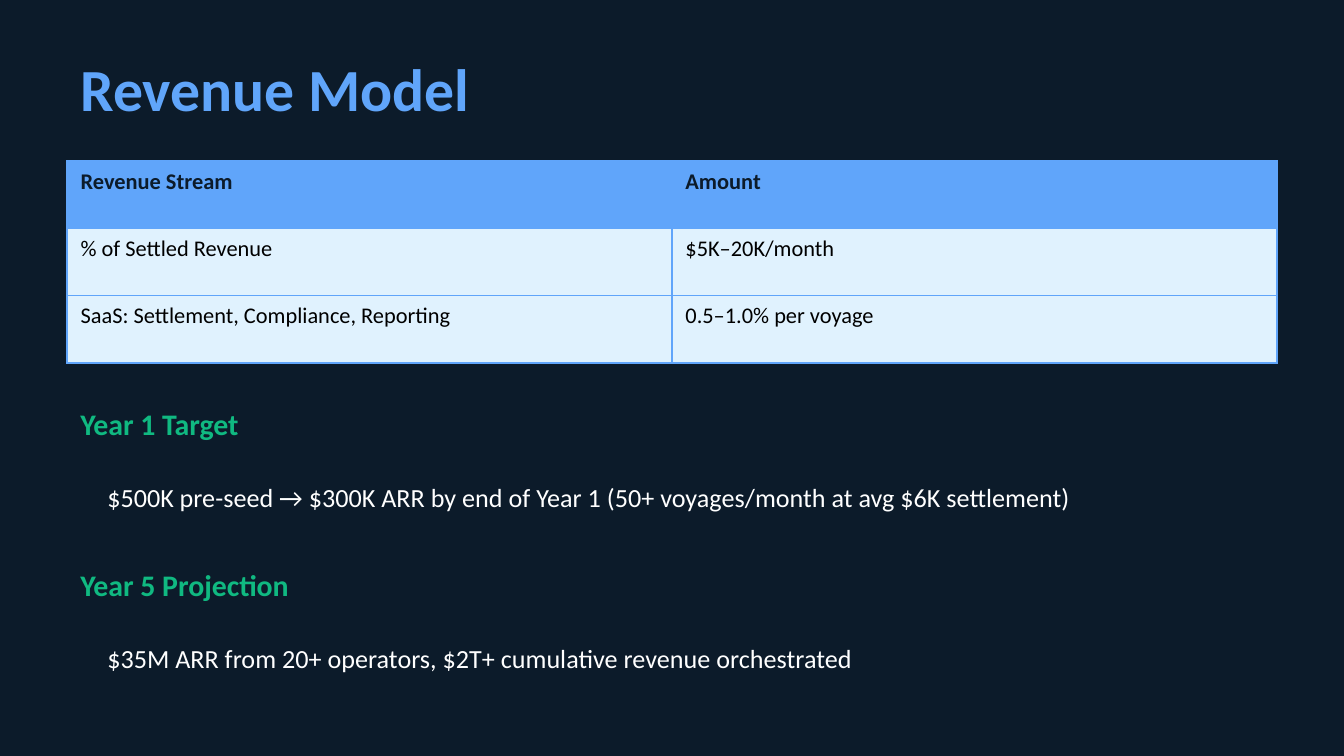
from dataclasses import dataclass

from lxml import etree
from pptx import Presentation
from pptx.dml.color import RGBColor
from pptx.enum.text import MSO_ANCHOR
from pptx.oxml.ns import qn
from pptx.util import Inches, Pt

MIDDLE = MSO_ANCHOR.MIDDLE
BLANK_LAYOUT = 6
SLIDE_WIDTH = 10
SLIDE_HEIGHT = SLIDE_WIDTH * 9 / 16


@dataclass(frozen=True)
class Theme:
    font: str = "Calibri"
    navy: str = "0C1B2A"
    blue: str = "60A5FA"
    pale_blue: str = "E0F2FE"
    green: str = "10B981"
    white: str = "FFFFFF"
    black: str = "000000"
    title_size: int = 32
    heading_size: int = 16
    body_size: int = 14
    table_size: int = 12
    border_width: int = 1


THEME = Theme()

REVENUE_STREAMS = [
    ("Revenue Stream", "Amount"),
    ("% of Settled Revenue", "$5K–20K/month"),
    ("SaaS: Settlement, Compliance, Reporting", "0.5–1.0% per voyage"),
]

GOALS = [
    ("Year 1 Target",
     "$500K pre-seed → $300K ARR by end of Year 1 (50+ voyages/month at avg $6K settlement)"),
    ("Year 5 Projection",
     "$35M ARR from 20+ operators, $2T+ cumulative revenue orchestrated"),
]


def write_text(frame, text, *, size, color, bold=False):
    """Write one formatted paragraph into a text frame."""
    paragraph = frame.paragraphs[0]
    run = paragraph.add_run()
    run.text = text
    run.font.name = THEME.font
    run.font.size = Pt(size)
    run.font.bold = bold
    run.font.color.rgb = RGBColor.from_string(color)


def add_label(slide, text, left, top, width, height, **text_format):
    """Add a wrapped, vertically centred text box measured in inches."""
    label = slide.shapes.add_textbox(
        Inches(left), Inches(top), Inches(width), Inches(height))
    label.text_frame.word_wrap = True
    label.text_frame.vertical_anchor = MIDDLE
    write_text(label.text_frame, text, **text_format)


def fill_cell(cell, color):
    """Give a table cell a solid fill and a border on all four sides."""
    cell.fill.solid()
    cell.fill.fore_color.rgb = RGBColor.from_string(color)
    properties = cell._tc.get_or_add_tcPr()
    for position, side in enumerate(("a:lnL", "a:lnR", "a:lnT", "a:lnB")):
        border = etree.Element(qn(side), w=str(Pt(THEME.border_width)))
        solid = etree.SubElement(border, qn("a:solidFill"))
        etree.SubElement(solid, qn("a:srgbClr"), val=THEME.blue)
        properties.insert(position, border)


def add_revenue_table(slide):
    """Add the table of revenue streams with its header row."""
    table = slide.shapes.add_table(
        len(REVENUE_STREAMS), len(REVENUE_STREAMS[0]),
        Inches(0.5), Inches(1.2), Inches(9), Inches(1.5)).table
    for row, stream in enumerate(REVENUE_STREAMS):
        is_header = row == 0
        for column, text in enumerate(stream):
            cell = table.cell(row, column)
            fill_cell(cell, THEME.blue if is_header else THEME.pale_blue)
            write_text(cell.text_frame, text, size=THEME.table_size,
                       color=THEME.navy if is_header else THEME.black,
                       bold=is_header)


def add_goal(slide, heading, detail, top):
    """Add a goal heading with its indented detail line below."""
    add_label(slide, heading, 0.5, top, 9, 0.4,
              size=THEME.heading_size, color=THEME.green, bold=True)
    add_label(slide, detail, 0.7, top + 0.5, 8.6, 0.5,
              size=THEME.body_size, color=THEME.white)


def main():
    """Build the revenue model slide and save it."""
    presentation = Presentation()
    presentation.slide_width = Inches(SLIDE_WIDTH)
    presentation.slide_height = Inches(SLIDE_HEIGHT)
    slide = presentation.slides.add_slide(presentation.slide_layouts[BLANK_LAYOUT])
    slide.background.fill.solid()
    slide.background.fill.fore_color.rgb = RGBColor.from_string(THEME.navy)

    add_label(slide, "Revenue Model", 0.5, 0.4, 9, 0.5,
              size=THEME.title_size, color=THEME.blue, bold=True)
    add_revenue_table(slide)
    for index, (heading, detail) in enumerate(GOALS):
        add_goal(slide, heading, detail, 2.95 + index * 1.2)

    presentation.save("out.pptx")


if __name__ == "__main__":
    main()
